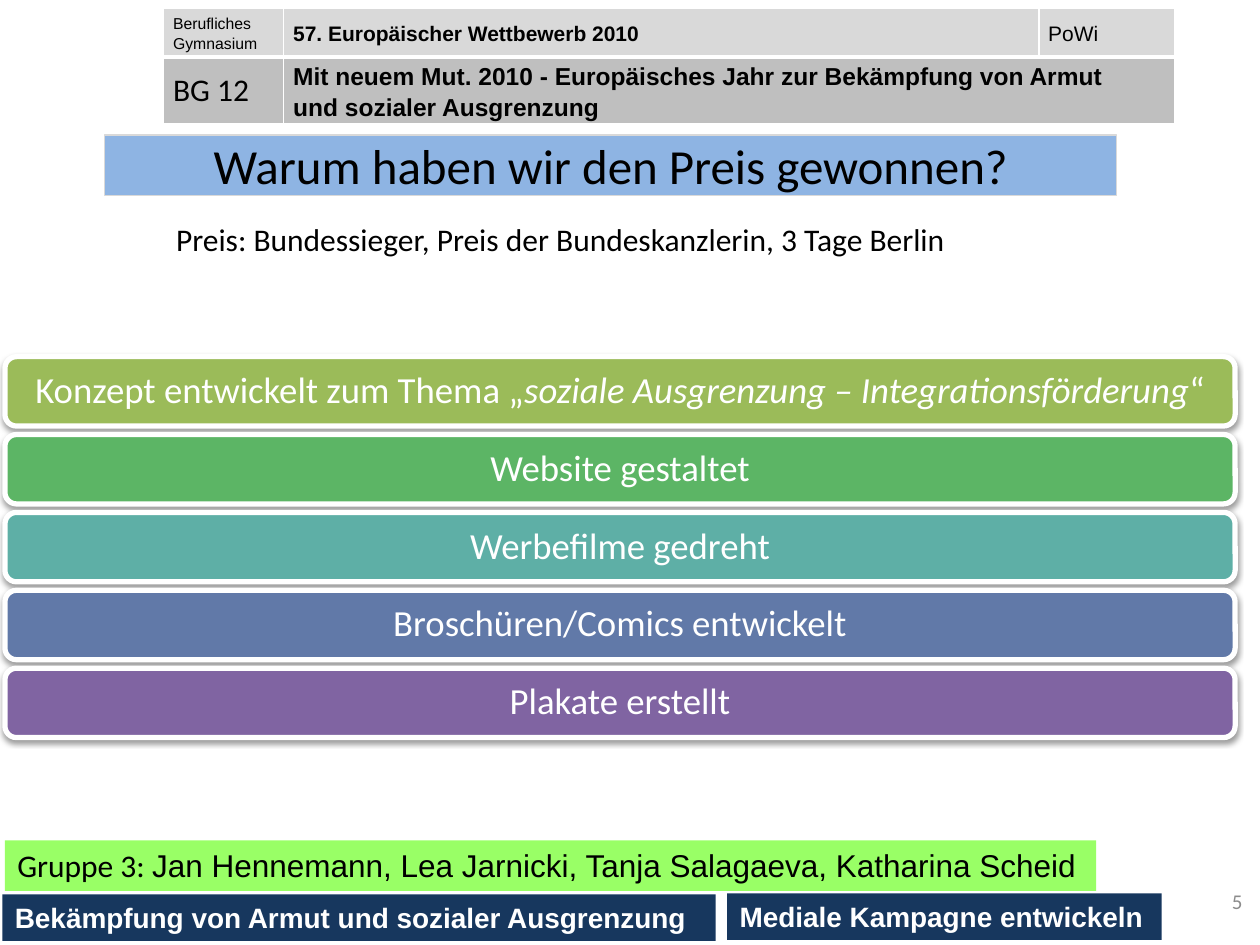
import pptx
import pptx.util
import pptx.dml.color
import pptx.enum.shapes
import pptx.enum.text
import pptx.oxml
import pptx.oxml.ns
from lxml import etree

Cm, Pt = pptx.util.Cm, pptx.util.Pt
RGBColor = pptx.dml.color.RGBColor
Shape = pptx.enum.shapes.MSO_SHAPE
Align = pptx.enum.text.PP_ALIGN
Anchor = pptx.enum.text.MSO_ANCHOR
qn = pptx.oxml.ns.qn

BLACK = RGBColor(0x00, 0x00, 0x00)
WHITE = RGBColor(0xFF, 0xFF, 0xFF)
GREY = RGBColor(0x8C, 0x8C, 0x8C)
LIGHT_GREY = RGBColor(0xD9, 0xD9, 0xD9)
MID_GREY = RGBColor(0xBF, 0xBF, 0xBF)
SKY = RGBColor(0x8E, 0xB4, 0xE3)
NAVY = RGBColor(0x17, 0x37, 0x5E)
LIME = RGBColor(0x99, 0xFF, 0x66)

# row, column, paragraphs, font, size, bold, line spacing
HEADER_CELLS = [
    (0, 0, ["Berufliches Gymnasium"], "Arial", 9, False, 1.15),
    (0, 1, ["57. Europäischer Wettbewerb 2010"], "Arial", 12, True, 1.15),
    (0, 2, ["PoWi"], "Arial", 12, False, 1.15),
    (1, 0, ["BG 12"], "Calibri", 18, False, 1.0),
    (1, 1, ["Mit neuem Mut. 2010 - Europäisches Jahr zur Bekämpfung von Armut",
            "und sozialer Ausgrenzung"], "Arial", 14, True, 1.15),
]
COLUMN_WIDTHS = [2.42, 15.22, 2.75]
ROW_HEIGHTS = [0.99, 1.35]
ROW_FILLS = [LIGHT_GREY, MID_GREY]

TITLE = "Warum haben wir den Preis gewonnen?"
PRIZE = "Preis: Bundessieger, Preis der Bundeskanzlerin, 3 Tage Berlin"
# text pieces (every second one is italic), fill
REASONS = [
    (["Konzept entwickelt zum Thema „",
      "soziale Ausgrenzung – Integrationsförderung", "“"], RGBColor(0x9B, 0xBB, 0x59)),
    (["Website gestaltet"], RGBColor(0x5C, 0xB5, 0x65)),
    (["Werbefilme gedreht"], RGBColor(0x5E, 0xAF, 0xA6)),
    (["Broschüren/Comics entwickelt"], RGBColor(0x61, 0x79, 0xA8)),
    (["Plakate erstellt"], RGBColor(0x80, 0x64, 0xA2)),
]
BARS_TOP, BAR_PITCH = 7.19, 1.57
GROUP = ["Gruppe 3: ", "Jan Hennemann, Lea Jarnicki, Tanja Salagaeva, Katharina Scheid"]
# text, left, top, width
FOOTERS = [
    ("Bekämpfung von Armut und sozialer Ausgrenzung", 0.05, 18.03, 14.38),
    ("Mediale Kampagne entwickeln", 14.66, 18.01, 8.76),
]


def add_box(page, place, pieces, size, color=BLACK, fill=None, line=None,
            font="Calibri", align=Align.LEFT, anchor=Anchor.TOP, kind=Shape.RECTANGLE):
    """Add a text box, or a filled shape when a fill is given; place is in cm."""
    place = [Cm(length) for length in place]
    if fill is None:
        box = page.shapes.add_textbox(*place)
    else:
        box = page.shapes.add_shape(kind, *place)
        box.shadow.inherit = False
        box.fill.solid()
        box.fill.fore_color.rgb = fill
        if line:
            box.line.color.rgb, box.line.width = line[0], Pt(line[1])
        else:
            box.line.fill.background()
    frame = box.text_frame
    frame.word_wrap = True
    frame.vertical_anchor = anchor
    para = frame.paragraphs[0]
    para.alignment = align
    for piece in pieces:
        span = para.add_run()
        span.text = piece
        span.font.name, span.font.size = font, Pt(size)
        span.font.color.rgb = color
    return box


def add_soft_shadow(box):
    effects = box._element.spPr.find(qn("a:effectLst"))
    shadow = etree.SubElement(effects, qn("a:outerShdw"), blurRad="40000",
                              dist="20000", dir="5400000", rotWithShape="0")
    color = etree.SubElement(shadow, qn("a:srgbClr"), val="000000")
    etree.SubElement(color, qn("a:alpha"), val="38000")


def set_borders(cell, widths):
    """Draw white borders; widths maps L, R, T, B to points."""
    properties = cell._tc.get_or_add_tcPr()
    for side, width in widths.items():
        line = etree.SubElement(properties, qn("a:ln" + side), w=str(Pt(width)))
        fill = etree.SubElement(line, qn("a:solidFill"))
        etree.SubElement(fill, qn("a:srgbClr"), val=str(WHITE))


def add_header(page):
    table = page.shapes.add_table(2, 3, Cm(3.3), Cm(0.16), Cm(sum(COLUMN_WIDTHS)),
                                  Cm(sum(ROW_HEIGHTS))).table
    for column, width in zip(table.columns, COLUMN_WIDTHS):
        column.width = Cm(width)
    for row, height in zip(table.rows, ROW_HEIGHTS):
        row.height = Cm(height)
    table.cell(1, 1).merge(table.cell(1, 2))
    for row in range(2):
        for column in range(3):
            cell = table.cell(row, column)
            set_borders(cell, {"L": 1, "R": 1, "T": 1 if row == 0 else 3,
                               "B": 3 if row == 0 else 1})
            cell.fill.solid()
            cell.fill.fore_color.rgb = ROW_FILLS[row]
    for row, column, lines, font, size, bold, spacing in HEADER_CELLS:
        cell = table.cell(row, column)
        cell.margin_left = cell.margin_right = Cm(0.19)
        cell.margin_top = cell.margin_bottom = 0
        cell.vertical_anchor = Anchor.MIDDLE
        cell.text_frame.text = "\n".join(lines)
        for para in cell.text_frame.paragraphs:
            para.line_spacing = spacing
            for span in para.runs:
                span.font.name, span.font.size, span.font.bold = font, Pt(size), bold
                span.font.color.rgb = BLACK


def main():
    deck = pptx.Presentation()
    deck.slide_width, deck.slide_height = Cm(25.4), Cm(19.05)
    page = deck.slides.add_slide(deck.slide_layouts[6])

    add_header(page)
    for index, (pieces, fill) in enumerate(REASONS):
        bar = add_box(page, (0.1, BARS_TOP + index * BAR_PITCH, 24.8, 1.4), pieces, 21,
                      WHITE, fill, (WHITE, 3), align=Align.CENTER,
                      anchor=Anchor.MIDDLE, kind=Shape.ROUNDED_RECTANGLE)
        add_soft_shadow(bar)
        para = bar.text_frame.paragraphs[0]
        para.line_spacing = 0.9
        for span in para.runs[1::2]:
            span.font.italic = True

    add_box(page, (19.38, 17.65, 5.92, 1.02), ["5"], 12, GREY,
            align=Align.RIGHT, anchor=Anchor.MIDDLE)
    group = add_box(page, (0.1, 16.94, 22, 1.02), GROUP, 18, fill=LIME)
    group.text_frame.paragraphs[0].runs[1].font.name = "Arial"
    add_box(page, (2.11, 2.72, 20.4, 1.22), [TITLE], 28, fill=SKY,
            line=(LIGHT_GREY, 0.75), align=Align.CENTER, anchor=Anchor.MIDDLE)
    add_box(page, (3.3, 4.32, 18.03, 1.02), [PRIZE], 18)
    for text, left, top, width in FOOTERS:
        footer = add_box(page, (left, top, width, 0.94), [text], 16, WHITE, NAVY, font="Arial")
        footer.text_frame.word_wrap = False
        footer.text_frame.paragraphs[0].runs[0].font.bold = True

    deck.save("out.pptx")


if __name__ == "__main__":
    main()
